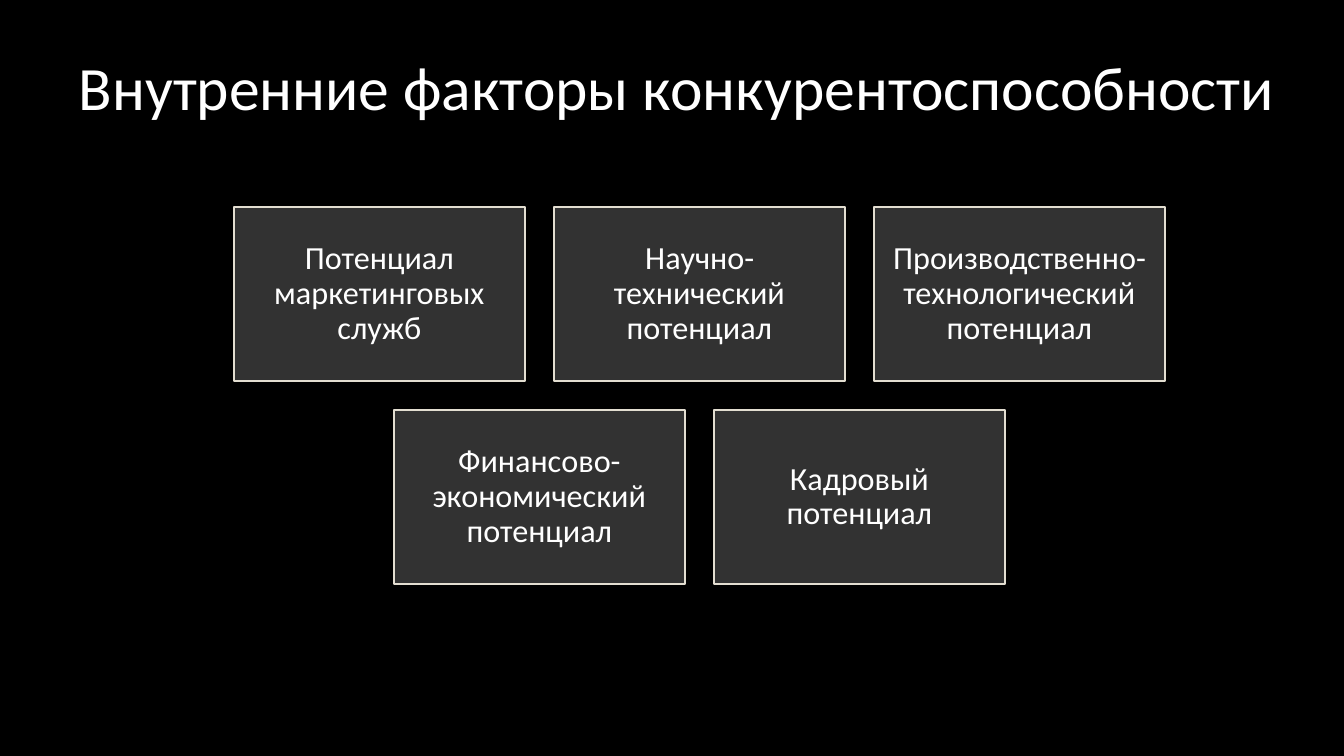
"""Build a slide on the internal factors of competitiveness."""
from pptx import Presentation
from pptx import util as u
from pptx.dml.color import RGBColor
from pptx.enum import shapes, text

PX = 914400 / 100.8
COLORS = {"background": "000000", "box": "323232", "border": "E3DED1", "text": "FFFFFF"}
FACTOR_ROWS = [
    ["Потенциал маркетинговых служб", "Научно-технический потенциал",
     "Производственно-технологический потенциал"],
    ["Финансово-экономический потенциал", "Кадровый потенциал"],
]
BOX_WIDTH, BOX_HEIGHT, GAP = 291, 174, 29
GRID_CENTER, GRID_TOP = 699, 207


def px(*lengths):
    return [round(length * PX) for length in lengths]


def write(shape, wording, size, margin):
    frame = shape.text_frame
    frame.word_wrap = True
    frame.auto_size = text.MSO_AUTO_SIZE.NONE
    frame.vertical_anchor = text.MSO_ANCHOR.MIDDLE
    frame.margin_left = frame.margin_right = u.Inches(0.1)
    frame.margin_top = frame.margin_bottom = u.Inches(margin)
    paragraph = frame.paragraphs[0]
    paragraph.alignment = text.PP_ALIGN.CENTER
    run = paragraph.add_run()
    run.text = wording
    run.font.name = "Calibri"
    run.font.size = u.Pt(size)
    run.font.color.rgb = RGBColor.from_string(COLORS["text"])
    return paragraph


presentation = Presentation()
presentation.slide_width, presentation.slide_height = px(1344, 756)
slide = presentation.slides.add_slide(presentation.slide_layouts[5])
slide.background.fill.solid()
slide.background.fill.fore_color.rgb = RGBColor.from_string(COLORS["background"])

title = slide.shapes.title
title.left, title.top, title.width, title.height = px(-27, 42, 1409, 88)
write(title, "Внутренние факторы конкурентоспособности", 44, 0.05)

for row, factors in enumerate(FACTOR_ROWS):
    row_width = len(factors) * (BOX_WIDTH + GAP) - GAP
    row_left = GRID_CENTER - row_width // 2
    top = GRID_TOP + row * (BOX_HEIGHT + GAP)
    for column, factor in enumerate(factors):
        left = row_left + column * (BOX_WIDTH + GAP)
        box = slide.shapes.add_shape(
            shapes.MSO_SHAPE.RECTANGLE, *px(left, top, BOX_WIDTH, BOX_HEIGHT))
        box.shadow.inherit = False
        box.fill.solid()
        box.fill.fore_color.rgb = RGBColor.from_string(COLORS["box"])
        box.line.color.rgb = RGBColor.from_string(COLORS["border"])
        box.line.width = u.Pt(1.25)
        write(box, factor, 23, 0.1).line_spacing = 0.9

presentation.save("out.pptx")
